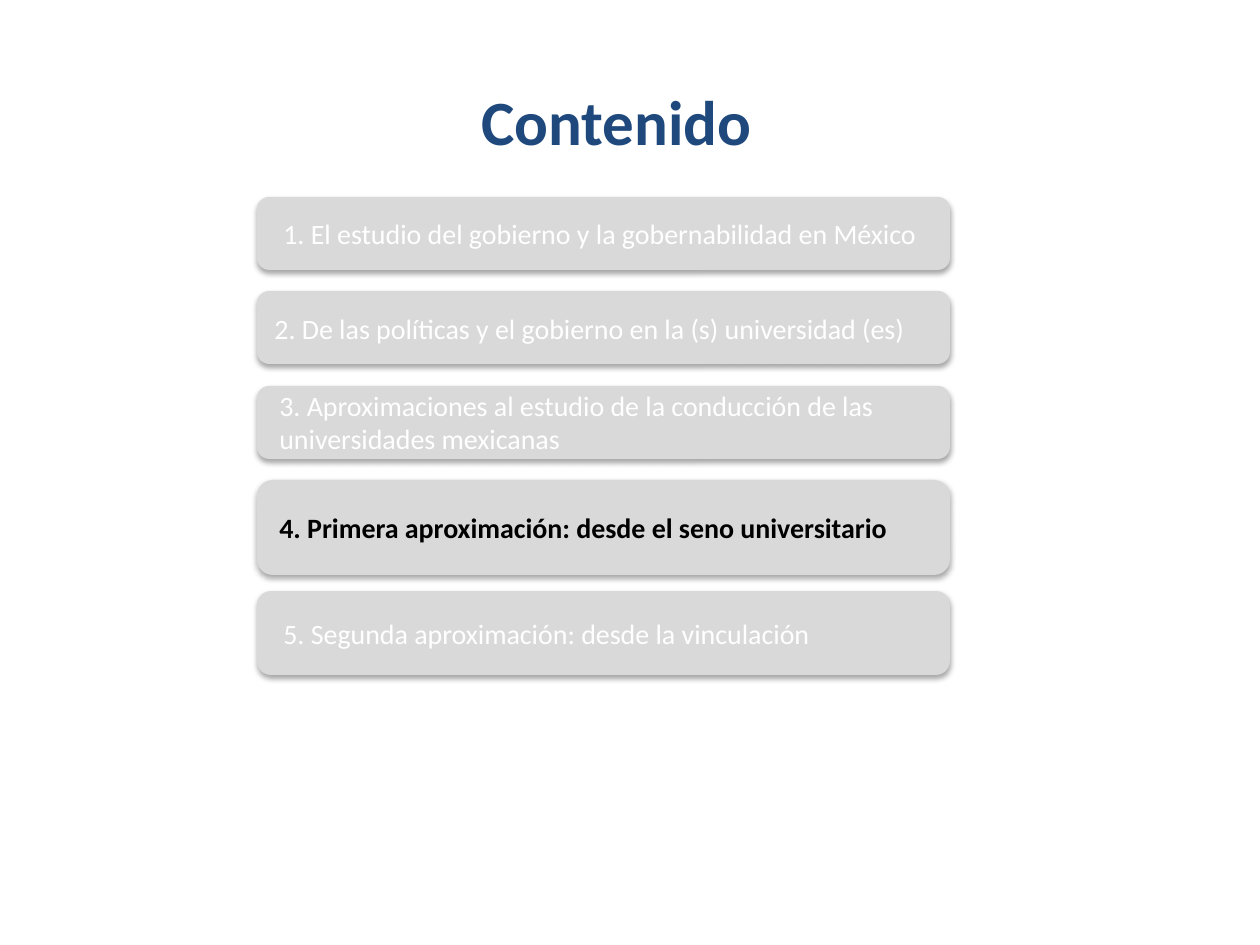
"""Build the contents slide with its current section highlighted."""
import dataclasses

import lxml.etree
import pptx
import pptx.dml.color
import pptx.enum.shapes
import pptx.enum.text
import pptx.oxml.ns
import pptx.util

SCALE = 914400 / 126
LEFT, WIDE = 257, 693


@dataclasses.dataclass(frozen=True)
class Theme:
    """Hold the colours, font and type sizes."""
    font: str = "Calibri"
    bar: str = "D9D9D9"
    title: str = "1F497D"
    faded: str = "FFFFFF"
    active: str = "000000"
    shade: str = "000000"
    head: int = 36
    body: int = 16


THEME = Theme()

# Each row: bar top, bar height, label box, wording, active
ROWS = [
    (197, 73, (271, 210, 665, 47),
     "1. El estudio del gobierno y la gobernabilidad en México", False),
    (291, 73, (262, 305, 665, 47),
     "2. De las políticas y el gobierno en la (s) universidad (es)", False),
    (386, 73, (267, 382, 683, 80),
     "3. Aproximaciones al estudio de la conducción de las "
     "universidades mexicanas", False),
    (480, 95, (267, 504, 669, 47),
     "4. Primera aproximación: desde el seno universitario", True),
    (591, 84, (271, 610, 630, 47),
     "5. Segunda aproximación: desde la vinculación", False),
]


def px(num):
    """Turn pixels into EMU."""
    return pptx.util.Emu(round(num * SCALE))


def rgb(code):
    """Turn a hex code into a colour."""
    return pptx.dml.color.RGBColor.from_string(code)


def add_shade(shape):
    """Give a shape a soft shadow that falls straight down."""
    name = pptx.oxml.ns.qn
    shape.shadow.inherit = False
    effects = shape._element.spPr.find(name("a:effectLst"))
    outer = lxml.etree.SubElement(
        effects, name("a:outerShdw"), blurRad="40000", dist="23000",
        dir="5400000", rotWithShape="0")
    tint = lxml.etree.SubElement(outer, name("a:srgbClr"), val=THEME.shade)
    lxml.etree.SubElement(tint, name("a:alpha"), val="35000")


def add_bar(slide, top, high):
    """Add one rounded bar of the list."""
    kind = pptx.enum.shapes.MSO_SHAPE.ROUNDED_RECTANGLE
    bar = slide.shapes.add_shape(kind, px(LEFT), px(top), px(WIDE), px(high))
    bar.fill.solid()
    bar.fill.fore_color.rgb = rgb(THEME.bar)
    bar.line.fill.background()
    add_shade(bar)


def add_text(slide, box, words, size, color, bold=False, wrap=True):
    """Add a text box in one style."""
    frame = slide.shapes.add_textbox(*map(px, box)).text_frame
    frame.word_wrap = wrap
    frame.auto_size = pptx.enum.text.MSO_AUTO_SIZE.SHAPE_TO_FIT_TEXT
    frame.text = words
    font = frame.paragraphs[0].runs[0].font
    font.name = THEME.font
    font.size = pptx.util.Pt(size)
    font.bold = bold
    font.color.rgb = rgb(color)


def main():
    """Build and save the slide."""
    deck = pptx.Presentation()
    deck.slide_width, deck.slide_height = px(1260), px(945)
    slide = deck.slides.add_slide(deck.slide_layouts[6])
    for top, high, *_ in ROWS:
        add_bar(slide, top, high)
    add_text(slide, (469, 76, 299, 89), "Contenido", THEME.head,
             THEME.title, bold=True, wrap=False)
    for _, _, box, words, active in ROWS:
        color = THEME.active if active else THEME.faded
        add_text(slide, box, words, THEME.body, color, bold=active)
    deck.save("out.pptx")


if __name__ == "__main__":
    main()
